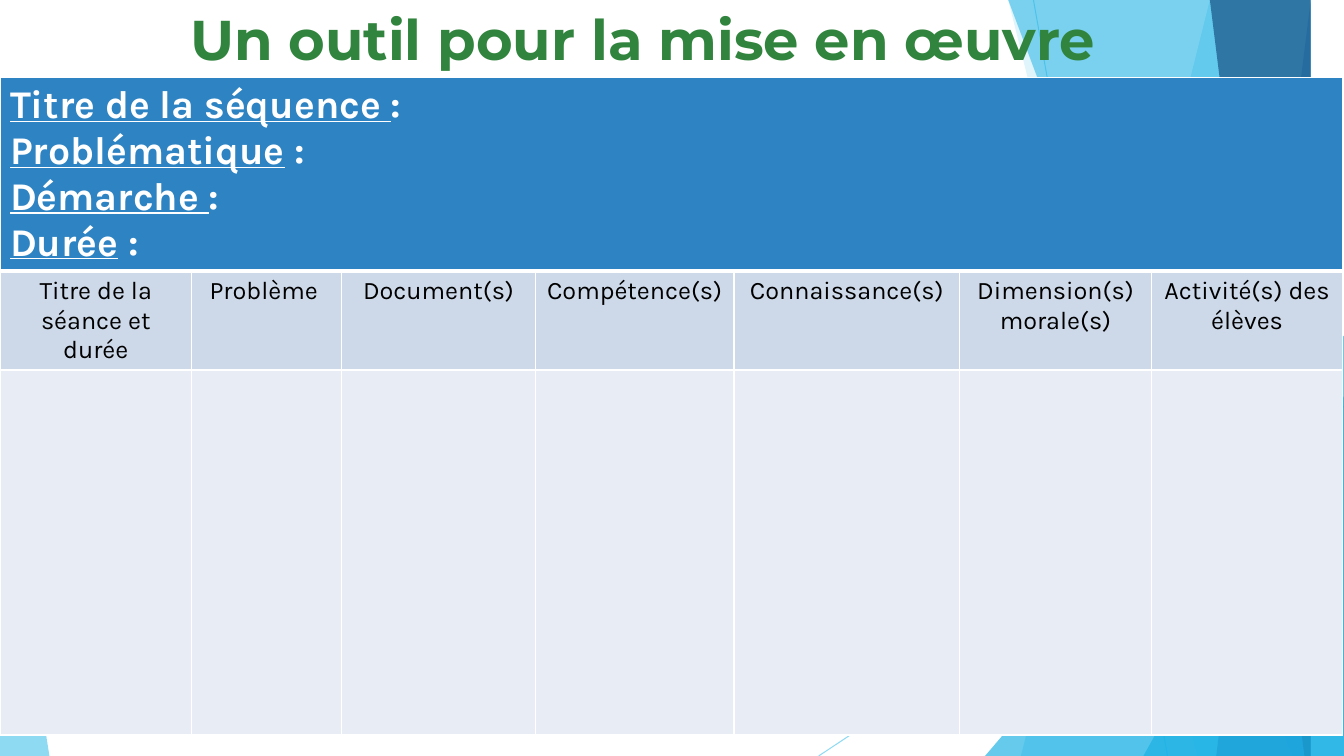
from pptx import Presentation
from pptx.dml.color import RGBColor
from pptx.enum.shapes import MSO_CONNECTOR, MSO_SHAPE
from pptx.enum.text import PP_ALIGN
from pptx.oxml.ns import qn
from pptx.util import Inches, Pt
from lxml.etree import SubElement

SKY = RGBColor(0x5F, 0xCB, 0xEF)
CYAN = RGBColor(0x17, 0xB0, 0xE4)
BLUE = RGBColor(0x2E, 0x83, 0xC3)
NAVY = RGBColor(0x22, 0x62, 0x92)
PALE_BLUE = RGBColor(0xCD, 0xD9, 0xE9)
ICE = RGBColor(0xE8, 0xED, 0xF5)
GREEN = RGBColor(0x31, 0x84, 0x3D)
WHITE = RGBColor(0xFF, 0xFF, 0xFF)
BLACK = RGBColor(0, 0, 0)

WIDTH, HEIGHT = 13.33, 7.5

RAYS = [((10.25, 0), (11.58, 7.5)), ((13.33, 4.03), (8.12, 7.5))]
BACK_PANELS = [(12.28, 10.04, SKY, 36), (10.5, 11.83, SKY, 20)]
FRONT_PANELS = [
    (10.21, 12.91, CYAN, 50),
    (13.03, 11.92, BLUE, 70),
    (11.96, 13.18, NAVY, 80),
]

SEQUENCE_FIELDS = [
    ("Titre de la séquence ", ":"),
    ("Problématique", " :"),
    ("Démarche ", ":"),
    ("Durée", " :"),
]
SESSION_COLUMNS = [
    ("Titre de la séance et durée", 1.9),
    ("Problème ", 1.49),
    ("Document(s)", 1.92),
    ("Compétence(s) ", 1.97),
    ("Connaissance(s)", 2.24),
    ("Dimension(s) morale(s)", 1.9),
    ("Activité(s) des élèves", 1.9),
]
ROW_HEIGHTS = [1.92, 0.98, 3.62]


def set_opacity(parent, percent):
    color = parent.find(".//" + qn("a:srgbClr"))
    SubElement(color, qn("a:alpha"), val=str(percent * 1000))


def paint(shape, color, opacity):
    shape.shadow.inherit = False
    shape.fill.solid()
    shape.fill.fore_color.rgb = color
    set_opacity(shape._element.spPr, opacity)
    shape.line.fill.background()


def format_run(run, font, size, color, bold=False):
    run.font.name = font
    run.font.size = Pt(size)
    run.font.color.rgb = color
    run.font.bold = bold


def add_ray(slide, start, end):
    ray = slide.shapes.add_connector(
        MSO_CONNECTOR.STRAIGHT, *(Inches(v) for v in start + end))
    ray.line.color.rgb = SKY
    ray.line.width = Pt(0.75)
    properties = ray._element.spPr
    set_opacity(properties, 70)
    SubElement(properties, qn("a:effectLst"))


def add_panel(slide, top_x, bottom_x, color, opacity, right, bottom):
    outline = slide.shapes.build_freeform(top_x, 0, scale=Inches(1))
    outline.add_line_segments([(right, 0), (right, bottom), (bottom_x, bottom)])
    paint(outline.convert_to_shape(), color, opacity)


def add_corner(slide, left, width, height, bottom, apex, color, opacity):
    corner = slide.shapes.add_shape(
        MSO_SHAPE.ISOSCELES_TRIANGLE,
        Inches(left), Inches(bottom - height), Inches(width), Inches(height))
    corner.adjustments[0] = apex
    paint(corner, color, opacity)


def add_backdrop(slide, width, height):
    for start, end in RAYS:
        add_ray(slide, start, end)
    for panel in BACK_PANELS:
        add_panel(slide, *panel, width, height)
    add_corner(slide, width - 3.56, 3.56, 4.17, height, 1, CYAN, 66)
    for panel in FRONT_PANELS:
        add_panel(slide, *panel, width, height)
    add_corner(slide, width - 1.99, 1.99, 3.57, height, 1, CYAN, 66)
    add_corner(slide, 0, 0.49, 3.11, height, 0, SKY, 70)


def set_borders(cell, bottom_width=1):
    properties = cell._tc.get_or_add_tcPr()
    sides = [("lnL", 1), ("lnR", 1), ("lnT", 1), ("lnB", bottom_width)]
    for position, (side, width) in enumerate(sides):
        border = SubElement(properties, qn("a:" + side), w=str(Pt(width)))
        fill = SubElement(border, qn("a:solidFill"))
        SubElement(fill, qn("a:srgbClr"), val=str(WHITE))
        properties.insert(position, border)


def fill_sequence_cell(cell):
    frame = cell.text_frame
    frame.text = "\n".join(label for label, _ in SEQUENCE_FIELDS)
    for paragraph, (_, colon) in zip(frame.paragraphs, SEQUENCE_FIELDS):
        paragraph.add_run().text = colon
        for run, underlined in zip(paragraph.runs, (True, False)):
            format_run(run, "Karla", 28, WHITE, bold=True)
            run.font.underline = underlined


def add_planning_table(slide, left, top, width, height):
    table = slide.shapes.add_table(
        len(ROW_HEIGHTS), len(SESSION_COLUMNS),
        Inches(left), Inches(top), Inches(width), Inches(height)).table
    for row, row_height in zip(table.rows, ROW_HEIGHTS):
        row.height = Inches(row_height)
    for column, (_, column_width) in zip(table.columns, SESSION_COLUMNS):
        column.width = Inches(column_width)
    for row, color, bottom_width in zip(
            table.rows, (BLUE, PALE_BLUE, ICE), (3, 1, 1)):
        for cell in row.cells:
            cell.fill.solid()
            cell.fill.fore_color.rgb = color
            set_borders(cell, bottom_width)
    sequence = table.cell(0, 0)
    sequence.merge(table.cell(0, len(SESSION_COLUMNS) - 1))
    fill_sequence_cell(sequence)
    for cell, (heading, _) in zip(table.rows[1].cells, SESSION_COLUMNS):
        cell.text_frame.text = heading
        paragraph = cell.text_frame.paragraphs[0]
        paragraph.alignment = PP_ALIGN.CENTER
        format_run(paragraph.runs[0], "Karla", 18, BLACK)


def add_title(slide, left, top, width, height):
    title = slide.shapes.add_textbox(
        Inches(left), Inches(top), Inches(width), Inches(height))
    frame = title.text_frame
    frame.word_wrap = True
    frame.margin_right = Inches(0.42)
    frame.text = "Un outil pour la mise en œuvre"
    paragraph = frame.paragraphs[0]
    paragraph.alignment = PP_ALIGN.CENTER
    format_run(paragraph.runs[0], "Montserrat", 40, GREEN, bold=True)


def main():
    presentation = Presentation()
    presentation.slide_width = Inches(WIDTH)
    presentation.slide_height = Inches(HEIGHT)
    slide = presentation.slides.add_slide(presentation.slide_layouts[6])
    add_backdrop(slide, WIDTH, HEIGHT)
    add_planning_table(slide, 0, 0.77, WIDTH, sum(ROW_HEIGHTS))
    add_title(slide, 0.97, 0, 11.13, 0.77)
    presentation.save("out.pptx")


if __name__ == "__main__":
    main()
